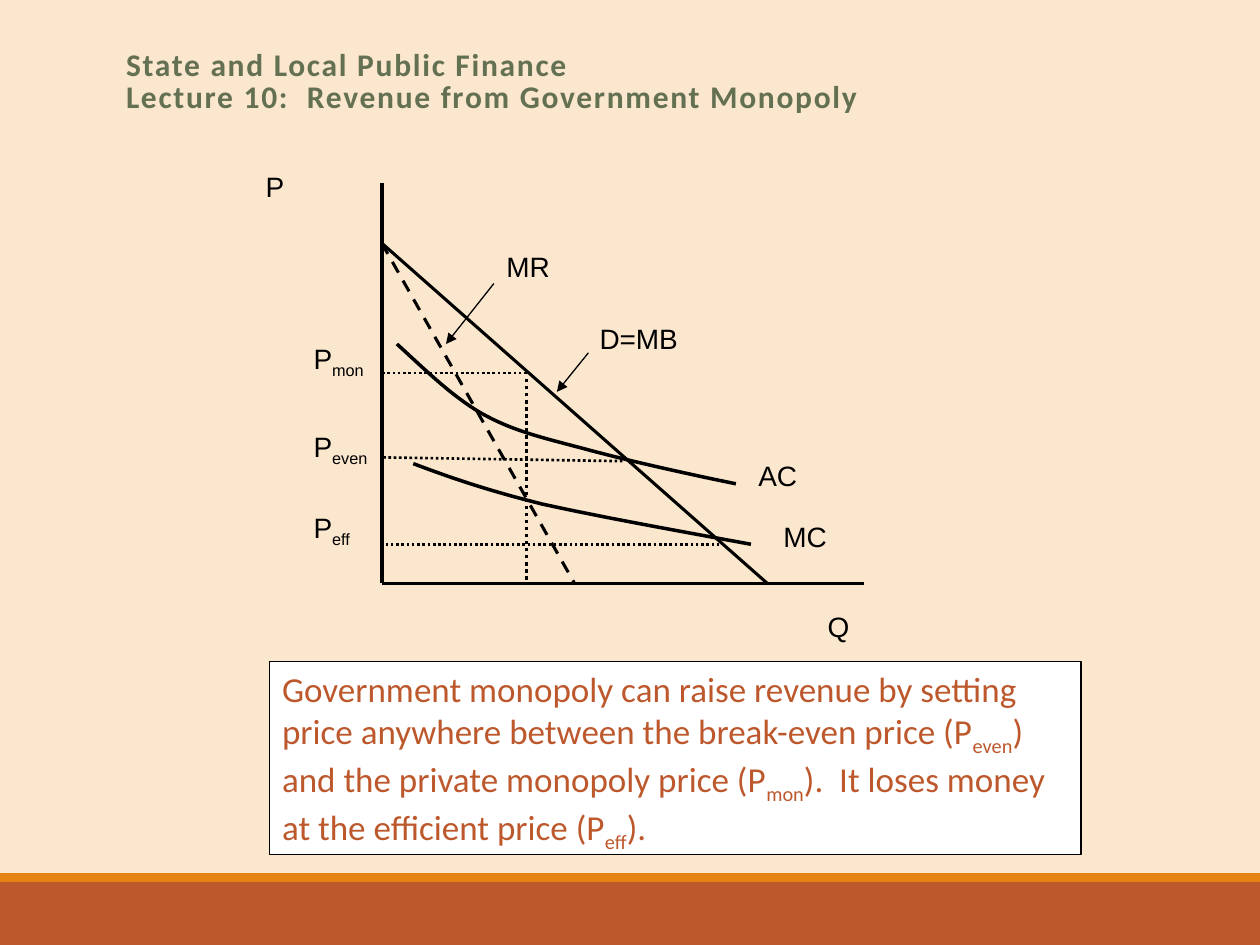
from pptx import Presentation, util as u
from pptx.dml.color import RGBColor
from pptx.enum import dml, shapes, text
from pptx.oxml.ns import qn
from lxml import etree

INK, RUST, GOLD, GREEN = "000000", "BD582C", "E48312", "637052"
LEFT, BASE, TOP = 3.03, 4.63, 1.93  # price axis, quantity axis, demand intercept
DOT, DASH = dml.MSO_LINE.ROUND_DOT, dml.MSO_LINE.DASH

LABELS = [
    ("P", 2.01, 1.3, 0.38), ("Q", 6.47, 4.79, 0.38),
    ("AC", 5.92, 3.59, 0.64), ("MC", 6.12, 4.07, 0.64),
    ("MR", 3.92, 1.93, 0.89), ("D=MB", 4.66, 2.5, 1.28),
    ("P|mon", 2.39, 2.66, 1.02), ("P|even", 2.39, 3.36, 1.02),
    ("P|eff", 2.39, 4, 1.02),
]
LINES = [
    (LEFT, 1.45, LEFT, BASE, 2, None),
    (LEFT, BASE, 6.86, BASE, 2, None),
    (LEFT, TOP, 6.09, BASE, 1.75, None),
    (LEFT, TOP, 4.56, BASE, 1.75, DASH),
    (5.71, 4.32, LEFT, 4.32, 1.5, DOT),
    (4.94, 3.66, LEFT, 3.63, 1.5, DOT),
    (4.18, 2.96, LEFT, 2.96, 1.5, DOT),
    (4.18, 4.6, 4.18, 3.01, 2, DOT),
]
ARROWS = [(3.92, 2.25, 3.54, 2.73), (4.67, 2.8, 4.42, 3.11)]
COSTS = [
    [(3.15, 2.73), (3.37, 2.93), (3.58, 3.14), (3.82, 3.28), (4.07, 3.42),
     (4.29, 3.47), (4.63, 3.56), (4.96, 3.65), (5.4, 3.75), (5.84, 3.84)],
    [(3.28, 3.68), (3.57, 3.79), (3.86, 3.89), (4.3, 4),
     (4.75, 4.1), (5.36, 4.21), (5.96, 4.32)],
]
NOTE = ("Government monopoly can raise revenue by setting price anywhere "
        "between the break-even price (P|even|) and the private monopoly "
        "price (P|mon|).  It loses money at the efficient price (P|eff|).")


def color(code):
    return RGBColor.from_string(code)


def style(run, code, **form):
    for key, val in form.items():
        setattr(run.font, key, val)
    run.font.color.rgb = color(code)


def write(frame, words, code, **form):
    """Fill a frame; every second part between bars is a subscript."""
    frame.word_wrap = True
    frame.vertical_anchor = text.MSO_ANCHOR.TOP
    para = frame.paragraphs[0]
    para.alignment = text.PP_ALIGN.LEFT
    for i, part in enumerate(words.split("|")):
        run = para.add_run()
        run.text = part
        style(run, code, **form)
        if i % 2:
            run._r.get_or_add_rPr().set("baseline", "-25000")


def add_title(slide):
    title = slide.shapes.title
    place = dict(left=0.9, top=0.33, width=8.25, height=0.65)
    for key, val in place.items():
        setattr(title, key, u.Inches(val))
    frame = title.text_frame
    frame.text = ("State and Local Public Finance\v"
                  "Lecture 10:  Revenue from Government Monopoly")
    frame.vertical_anchor = text.MSO_ANCHOR.MIDDLE
    para = frame.paragraphs[0]
    para.alignment = text.PP_ALIGN.LEFT
    para.line_spacing = 0.85
    for run in para.runs:
        style(run, GREEN, name="Calibri", size=u.Pt(18), bold=True)
        run._r.get_or_add_rPr().set("spc", "100")


def add_rect(slide, x, y, w, h, fill, edge=None):
    box = slide.shapes.add_shape(shapes.MSO_SHAPE.RECTANGLE,
                                 *map(u.Inches, (x, y, w, h)))
    box.shadow.inherit = False
    box.fill.solid()
    box.fill.fore_color.rgb = color(fill)
    if edge:
        box.line.color.rgb = color(edge)
        box.line.width = u.Pt(0.75)
    else:
        box.line.fill.background()
    return box


def add_label(slide, words, x, y, w):
    box = slide.shapes.add_textbox(*map(u.Inches, (x, y, w, 0.48)))
    write(box.text_frame, words, INK, name="Arial", size=u.Pt(16))


def add_line(slide, x1, y1, x2, y2, width, dash=None):
    line = slide.shapes.add_connector(shapes.MSO_CONNECTOR.STRAIGHT,
                                      *map(u.Inches, (x1, y1, x2, y2)))
    line.line.color.rgb = color(INK)
    line.line.width = u.Pt(width)
    if dash:
        line.line.dash_style = dash
    etree.SubElement(line._element.spPr, qn("a:effectLst"))
    return line


def add_arrow(slide, *ends):
    line = add_line(slide, *ends, 0.75)
    etree.SubElement(line.line._get_or_add_ln(), qn("a:tailEnd"),
                     type="triangle")


def add_curve(slide, pts, steps=16):
    """Draw joined cubic Bezier arcs as fine steps."""
    dots = []
    for i in range(0, len(pts) - 1, 3):
        for n in range(1, steps + 1):
            t = n / steps
            mix = ((1 - t)**3, 3 * t * (1 - t)**2, 3 * t * t * (1 - t), t**3)
            dots.append(tuple(
                u.Inches(sum(m * p[k] for m, p in zip(mix, pts[i:i + 4])))
                for k in (0, 1)))
    pen = slide.shapes.build_freeform(*map(u.Inches, pts[0]))
    pen.add_line_segments(dots, close=False)
    curve = pen.convert_to_shape()
    curve.shadow.inherit = False
    curve.fill.background()
    curve.line.color.rgb = color(INK)
    curve.line.width = u.Pt(2)


def main():
    deck = Presentation()
    deck.slide_width, deck.slide_height = u.Inches(10), u.Inches(7.5)
    slide = deck.slides.add_slide(deck.slide_layouts[5])
    slide.background.fill.solid()
    slide.background.fill.fore_color.rgb = color("FBE6CE")
    add_rect(slide, 0, 7, 10, 0.5, RUST)
    add_rect(slide, 0, 6.93, 10, 0.07, GOLD)
    add_title(slide)
    for line in LINES:
        add_line(slide, *line)
    for pts in COSTS:
        add_curve(slide, pts)
    for ends in ARROWS:
        add_arrow(slide, *ends)
    for label in LABELS:
        add_label(slide, *label)
    note = add_rect(slide, 2.14, 5.25, 6.44, 1.53, "FFFFFF", INK)
    write(note.text_frame, NOTE, RUST, name="Calibri", size=u.Pt(20))
    deck.save("out.pptx")


if __name__ == "__main__":
    main()
